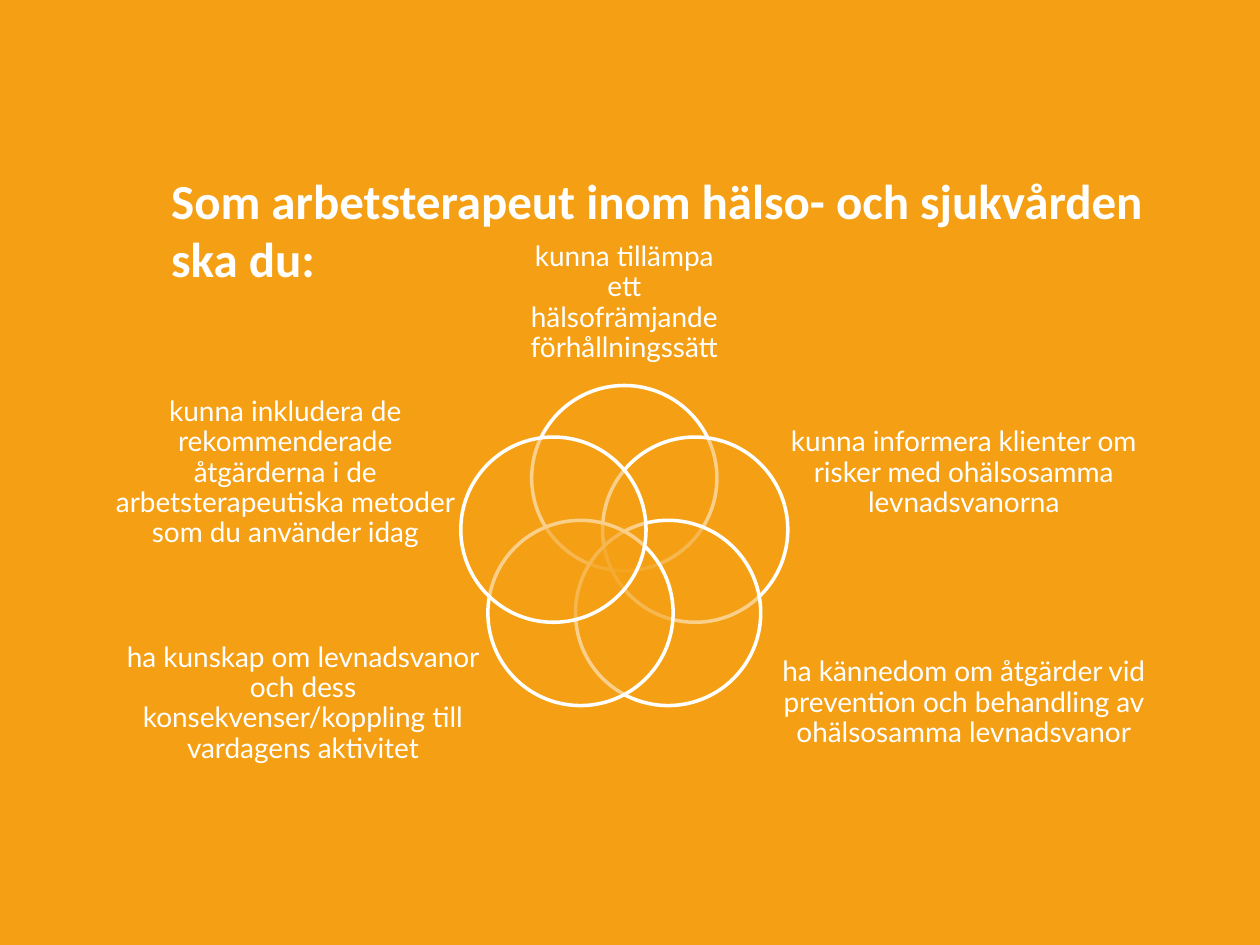
"""Build a slide with five overlapping circles and their labels."""
import math
from dataclasses import dataclass

from pptx import Presentation
from pptx import util as u
from pptx.dml.color import RGBColor
from pptx.enum import shapes, text
from pptx.oxml.ns import qn
from lxml import etree


@dataclass(frozen=True)
class Theme:
    """Colours, fonts and sizes of the slide."""
    orange: RGBColor = RGBColor(0xF5, 0xA0, 0x14)
    white: RGBColor = RGBColor(0xFF, 0xFF, 0xFF)
    title_font: str = "Calibri"
    label_font: str = "Lato"
    title_size: int = 28
    label_size: int = 16
    outline: int = 2
    alpha: int = 50


THEME = Theme()
TITLE = "Som arbetsterapeut inom hälso- och sjukvården ska du:"
LABELS = [
    ("kunna tillämpa ett hälsofrämjande förhållningssätt", (4.1, 1.91, 1.71, 0.99)),
    ("kunna informera klienter om risker med ohälsosamma levnadsvanorna", (6.2, 3.22, 2.9, 1.07)),
    ("ha kännedom om åtgärder vid prevention och behandling av ohälsosamma levnadsvanor",
     (6.08, 4.7, 3.14, 1.76)),
    ("ha kunskap om levnadsvanor och dess konsekvenser/koppling till vardagens aktivitet",
     (0.9, 5.05, 3.01, 1.07)),
    ("kunna inkludera de rekommenderade åtgärderna i de arbetsterapeutiska metoder "
     "som du använder idag", (0.9, 3.22, 2.73, 1.07)),
]


def apply(obj, values):
    """Set each named attribute of an object."""
    for name, value in values.items():
        setattr(obj, name, value)


def add_text(s, box, words, font, frame=None, para=None):
    """Place one wrapped paragraph in a box."""
    tf = s.shapes.add_textbox(*map(u.Inches, box)).text_frame
    apply(tf, {"word_wrap": True, **(frame or {})})
    p = tf.paragraphs[0]
    apply(p, para or {})
    r = p.add_run()
    r.text = words
    apply(r.font, font)
    r.font.color.rgb = THEME.white


def add_title(s, box):
    """Place the heading."""
    add_text(s, box, TITLE, {"name": THEME.title_font, "size": u.Pt(THEME.title_size), "bold": True})


def add_label(s, box, words):
    """Place a centred label without margins."""
    margins = {f"margin_{side}": 0 for side in ("left", "top", "right", "bottom")}
    add_text(s, box, words,
             {"name": THEME.label_font, "size": u.Pt(THEME.label_size)},
             {"vertical_anchor": text.MSO_ANCHOR.MIDDLE, **margins},
             {"alignment": text.PP_ALIGN.CENTER, "line_spacing": 0.9})


def add_circle(s, box):
    """Place a translucent circle with a white outline."""
    sp = s.shapes.add_shape(shapes.MSO_SHAPE.OVAL, *map(u.Inches, box))
    sp.shadow.inherit = False
    sp.fill.solid()
    sp.fill.fore_color.rgb = THEME.orange
    colour = sp.fill._xPr.find(qn("a:solidFill"))[0]
    etree.SubElement(colour, qn("a:alpha"), val=str(THEME.alpha * 1000))
    sp.line.color.rgb = THEME.white
    sp.line.width = u.Pt(THEME.outline)


def add_venn(s, box, labels, diameter=1.47):
    """Spread circles evenly round a ring inside a box and add their labels."""
    left, top, width, height = box
    ring = (height - diameter) / (1 + math.cos(math.pi / len(labels)))
    for i, (words, label_box) in enumerate(labels):
        angle = 2 * math.pi * i / len(labels)
        x = left + (width - diameter) / 2 + ring * math.sin(angle)
        y = top + ring * (1 - math.cos(angle))
        add_circle(s, (x, y, diameter, diameter))
        add_label(s, label_box, words)


def main():
    """Build and save the slide."""
    prs = Presentation()
    apply(prs, {"slide_width": u.Inches(10), "slide_height": u.Inches(7.5)})
    s = prs.slides.add_slide(prs.slide_layouts[6])
    s.background.fill.solid()
    s.background.fill.fore_color.rgb = THEME.orange
    add_title(s, (1.26, 1.3, 8.48, 2.91))
    add_venn(s, (3.66, 3.06, 2.59, 2.54), LABELS)
    prs.save("out.pptx")


if __name__ == "__main__":
    main()
